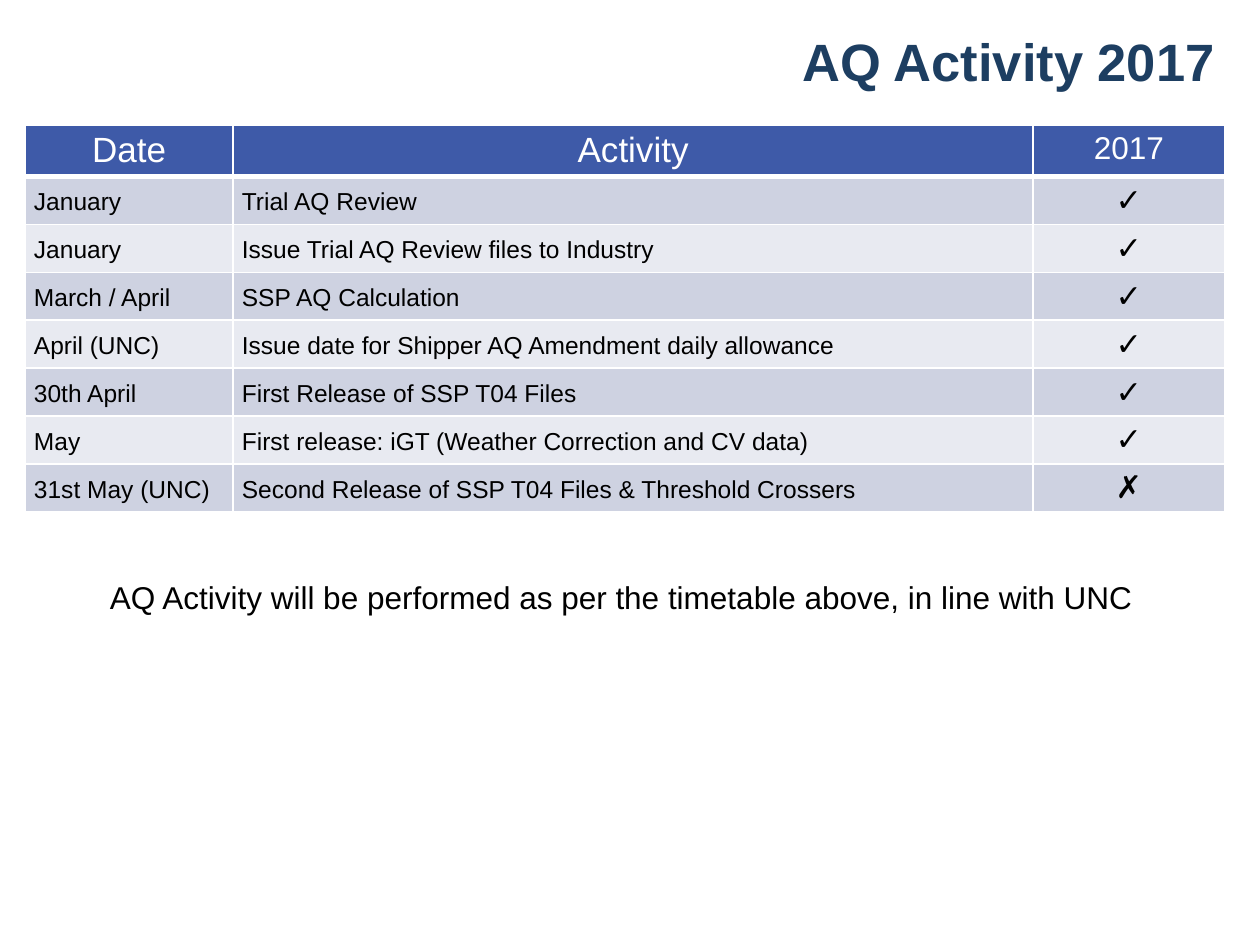
from lxml.etree import SubElement
from pptx import Presentation
from pptx.dml.color import RGBColor
from pptx.enum.text import MSO_ANCHOR, PP_ALIGN
from pptx.oxml.ns import qn
from pptx.util import Inches, Pt

FONT = "Arial"
WHITE, BLACK, NAVY, BLUE = "FFFFFF", "000000", "1D3E61", "3E5AA8"
BANDS = ("CED2E1", "E8EAF1")
LEFT, CONTENT_WIDTH = 0.2, 9.53
COLUMN_WIDTHS = (1.65, 6.35, 1.52)
ROW_HEIGHT = 0.34
HEADINGS = (("Date", 20), ("Activity", 20), ("2017", 18))
ACTIVITIES = (
    ("January", "Trial AQ Review", "✓"),
    ("January", "Issue Trial AQ Review files to Industry", "✓"),
    ("March / April", "SSP AQ Calculation", "✓"),
    ("April (UNC)", "Issue date for Shipper AQ Amendment daily allowance", "✓"),
    ("30th April", "First Release of SSP T04 Files", "✓"),
    ("May", "First release: iGT (Weather Correction and CV data)", "✓"),
    ("31st May (UNC)", "Second Release of SSP T04 Files & Threshold Crossers", "✗"),
)


def color(hex_string):
    """Return the colour for a hex string."""
    return RGBColor.from_string(hex_string)


def write(text_frame, text, size, hex_string, alignment, bold=False):
    """Add one run to the first paragraph and return the paragraph."""
    paragraph = text_frame.paragraphs[0]
    paragraph.alignment = alignment
    run = paragraph.add_run()
    run.text = text
    run.font.name = FONT
    run.font.size = Pt(size)
    run.font.bold = bold
    run.font.color.rgb = color(hex_string)
    return paragraph


def add_text(slide, box, text, size, hex_string, alignment, anchor, bold=False):
    """Add a wrapped text box with one line of text."""
    shape = slide.shapes.add_textbox(*map(Inches, box))
    shape.text_frame.word_wrap = True
    shape.text_frame.vertical_anchor = anchor
    write(shape.text_frame, text, size, hex_string, alignment, bold)


def style_cell(cell, fill, top=1, bottom=1):
    """Give a cell its white borders and solid fill."""
    properties = cell._tc.get_or_add_tcPr()
    for side, width in (("L", 1), ("R", 1), ("T", top), ("B", bottom)):
        line = SubElement(properties, qn(f"a:ln{side}"), w=str(Pt(width)))
        solid = SubElement(line, qn("a:solidFill"))
        SubElement(solid, qn("a:srgbClr"), val=WHITE)
    cell.fill.solid()
    cell.fill.fore_color.rgb = color(fill)


def fill_header(table):
    """Write the heading row."""
    for column, (heading, size) in enumerate(HEADINGS):
        cell = table.cell(0, column)
        style_cell(cell, BLUE, bottom=3)
        write(cell.text_frame, heading, size, WHITE, PP_ALIGN.CENTER)


def fill_activity(table, row, activity):
    """Write one activity with its date and status mark."""
    *labels, mark = activity
    fill = BANDS[(row - 1) % len(BANDS)]
    top = 3 if row == 1 else 1
    for column, label in enumerate(labels):
        cell = table.cell(row, column)
        style_cell(cell, fill, top)
        cell.vertical_anchor = MSO_ANCHOR.MIDDLE
        cell.margin_left = cell.margin_right = Inches(0.07)
        cell.margin_top = cell.margin_bottom = 0
        paragraph = write(cell.text_frame, label, 14, BLACK, PP_ALIGN.LEFT)
        paragraph.line_spacing = 1.15
    cell = table.cell(row, len(labels))
    style_cell(cell, fill, top)
    cell.vertical_anchor = MSO_ANCHOR.MIDDLE
    write(cell.text_frame, mark, 18, BLACK, PP_ALIGN.CENTER)


def add_timetable(slide):
    """Add the table of activities."""
    rows = len(ACTIVITIES) + 1
    box = (LEFT, 0.99, CONTENT_WIDTH, rows * ROW_HEIGHT)
    table = slide.shapes.add_table(rows, len(HEADINGS), *map(Inches, box)).table
    for column, width in zip(table.columns, COLUMN_WIDTHS):
        column.width = Inches(width)
    fill_header(table)
    for row, activity in enumerate(ACTIVITIES, start=1):
        fill_activity(table, row, activity)


def main():
    """Build and save the slide."""
    presentation = Presentation()
    presentation.slide_width = Inches(10)
    presentation.slide_height = Inches(7.5)
    slide = presentation.slides.add_slide(presentation.slide_layouts[6])
    add_timetable(slide)
    add_text(slide, (LEFT, 4.54, CONTENT_WIDTH, 0.4),
             "AQ Activity will be performed as per the timetable above, in line with UNC ",
             18, BLACK, PP_ALIGN.CENTER, MSO_ANCHOR.TOP)
    add_text(slide, (0, 0.13, 9.74, 0.7), "AQ Activity 2017",
             30, NAVY, PP_ALIGN.RIGHT, MSO_ANCHOR.MIDDLE, bold=True)
    presentation.save("out.pptx")


if __name__ == "__main__":
    main()
